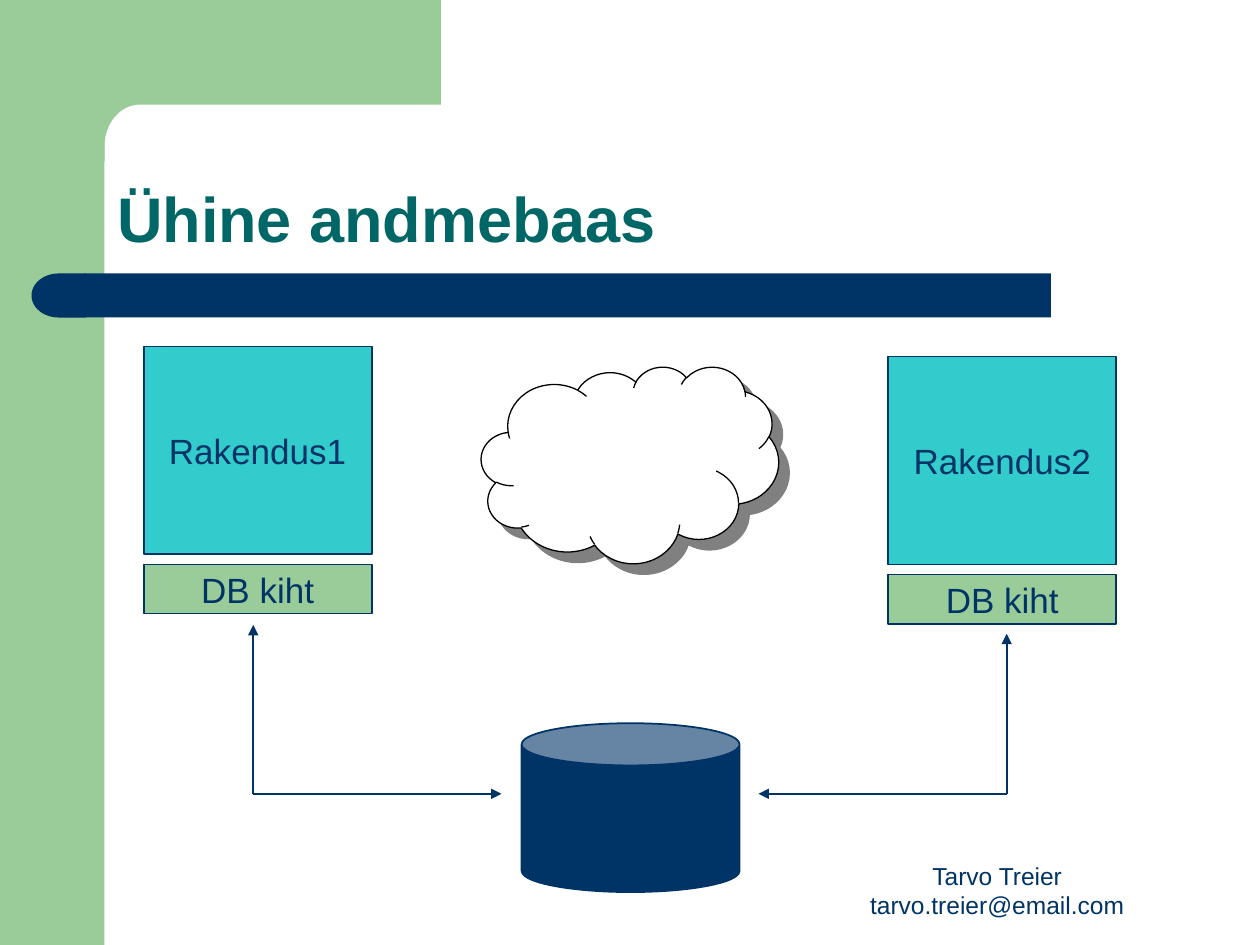
from dataclasses import dataclass
from math import cos, pi, sin

from lxml.etree import SubElement
from pptx import Presentation
from pptx.dml.color import RGBColor
from pptx.enum.shapes import MSO_CONNECTOR, MSO_SHAPE
from pptx.enum.text import MSO_ANCHOR, PP_ALIGN
from pptx.oxml.ns import qn
from pptx.shapes.autoshape import Shape
from pptx.slide import Slide
from pptx.text.text import TextFrame
from pptx.util import Inches, Pt


@dataclass(frozen=True)
class Theme:
    font: str = "Arial"
    navy: str = "003366"
    green: str = "99CC99"
    teal: str = "33CCCC"
    heading: str = "006666"
    white: str = "FFFFFF"
    black: str = "000000"
    shadow: str = "808080"
    title_size: int = 36
    label_size: int = 20
    footer_size: int = 14


@dataclass(frozen=True)
class Application:
    name: str
    left: float
    top: float


@dataclass(frozen=True)
class Link:
    """Two arrows that leave one corner: up to a layer, across to the database."""
    corner_x: float
    layer_y: float
    database_x: float


THEME = Theme()
BOX_WIDTH, APP_HEIGHT, LAYER_HEIGHT, LAYER_OFFSET = 1.81, 1.65, 0.39, 1.73
CORNER_Y = 6.3
APPLICATIONS = [Application("Rakendus1", 1.14, 2.75), Application("Rakendus2", 7.05, 2.83)]
LINKS = [Link(2.01, 4.96, 3.98), Link(7.99, 5.03, 6.02)]


def color(value: str) -> RGBColor:
    return RGBColor.from_string(value)


def paint(shape: Shape, fill: str, line: str | None = None, width: float = 1) -> None:
    shape.shadow.inherit = False
    shape.fill.solid()
    shape.fill.fore_color.rgb = color(fill)
    if line is None:
        shape.line.fill.background()
    else:
        shape.line.color.rgb = color(line)
        shape.line.width = Pt(width)


def add_shape(page: Slide, kind: MSO_SHAPE, left: float, top: float, width: float,
              height: float, fill: str, line: str | None = None, line_width: float = 1) -> Shape:
    shape = page.shapes.add_shape(kind, Inches(left), Inches(top), Inches(width), Inches(height))
    paint(shape, fill, line, line_width)
    return shape


def set_text(frame: TextFrame, text: str, size: int, ink: str, align: PP_ALIGN,
             anchor: MSO_ANCHOR, bold: bool = False) -> None:
    frame.text = text
    frame.vertical_anchor = anchor
    for paragraph in frame.paragraphs:
        paragraph.alignment = align
        for span in paragraph.runs:
            span.font.name = THEME.font
            span.font.size = Pt(size)
            span.font.bold = bold
            span.font.color.rgb = color(ink)


def add_label_box(page: Slide, text: str, left: float, top: float, height: float, fill: str) -> None:
    box = add_shape(page, MSO_SHAPE.RECTANGLE, left, top, BOX_WIDTH, height, fill, THEME.navy)
    frame = box.text_frame
    frame.margin_left = frame.margin_right = 0
    frame.word_wrap = False
    set_text(frame, text, THEME.label_size, THEME.navy, PP_ALIGN.CENTER, MSO_ANCHOR.MIDDLE)


def add_application(page: Slide, app: Application) -> None:
    add_label_box(page, app.name, app.left, app.top, APP_HEIGHT, THEME.teal)
    add_label_box(page, "DB kiht", app.left, app.top + LAYER_OFFSET, LAYER_HEIGHT, THEME.green)


def add_arrow(page: Slide, start: tuple[float, float], end: tuple[float, float]) -> None:
    arrow = page.shapes.add_connector(MSO_CONNECTOR.STRAIGHT, *map(Inches, start + end))
    arrow.line.color.rgb = color(THEME.navy)
    arrow.line.width = Pt(1)
    SubElement(arrow.line._get_or_add_ln(), qn("a:tailEnd"), type="triangle")
    SubElement(arrow._element.spPr, qn("a:effectLst"))


def add_link(page: Slide, link: Link) -> None:
    corner = (link.corner_x, CORNER_Y)
    add_arrow(page, corner, (link.corner_x, link.layer_y))
    add_arrow(page, corner, (link.database_x, CORNER_Y))


def add_frame(page: Slide) -> None:
    # Side panel and top band, joined by a rounded inner corner
    add_shape(page, MSO_SHAPE.RECTANGLE, 0, 0, 0.83, 7.5, THEME.green)
    steps = 16
    angles = [pi / 2 * step / steps for step in range(steps + 1)]
    curve = [(1.11 - 0.28 * sin(angle), 1.16 - 0.33 * cos(angle)) for angle in angles]
    outline = [(3.5, 0), (3.5, 0.83), *curve, (0.83, 1.28), (0.5, 1.28)]
    builder = page.shapes.build_freeform(Inches(0.5), 0)
    builder.add_line_segments([(Inches(x), Inches(y)) for x, y in outline])
    paint(builder.convert_to_shape(), THEME.green)

    # Title bar with a rounded left end
    add_shape(page, MSO_SHAPE.RECTANGLE, 0.67, 2.17, 7.67, 0.35, THEME.navy)
    add_shape(page, MSO_SHAPE.FLOWCHART_DELAY, 0.25, 2.17, 0.43, 0.35, THEME.navy).rotation = 180


def add_title(page: Slide, text: str) -> None:
    title = page.shapes.title
    title.left, title.top, title.width, title.height = map(Inches, (0.83, 0.83, 8.67, 1.25))
    set_text(title.text_frame, text, THEME.title_size, THEME.heading,
             PP_ALIGN.LEFT, MSO_ANCHOR.BOTTOM, bold=True)
    title.text_frame.paragraphs[0].line_spacing = 0.9


def add_cloud(page: Slide) -> None:
    cloud = add_shape(page, MSO_SHAPE.CLOUD, 3.82, 2.91, 2.36, 1.56, THEME.white, THEME.black, 0.75)
    effects = cloud._element.spPr.find(qn("a:effectLst"))
    shadow = SubElement(effects, qn("a:outerShdw"), blurRad="0", dist=str(Pt(8.5)),
                        dir="2700000", algn="ctr", rotWithShape="0")
    SubElement(shadow, qn("a:srgbClr"), val=THEME.shadow)


def add_footer(page: Slide) -> None:
    footer = page.shapes.add_textbox(*map(Inches, (6.33, 6.83, 3.17, 0.52)))
    footer.text_frame.word_wrap = True
    set_text(footer.text_frame, "Tarvo Treier\vtarvo.treier@email.com", THEME.footer_size,
             THEME.navy, PP_ALIGN.CENTER, MSO_ANCHOR.BOTTOM)


def main() -> None:
    deck = Presentation()
    deck.slide_width, deck.slide_height = Inches(10), Inches(7.5)
    page = deck.slides.add_slide(deck.slide_layouts[5])

    add_frame(page)
    add_footer(page)
    add_title(page, "Ühine andmebaas")

    # Applications around the network cloud
    for app in APPLICATIONS:
        add_application(page, app)
    add_cloud(page)

    # Shared database and its links
    for link in LINKS:
        add_link(page, link)
    add_shape(page, MSO_SHAPE.CAN, 4.14, 5.74, 1.73, 1.34, THEME.navy, THEME.navy)

    deck.save("out.pptx")


if __name__ == "__main__":
    main()
